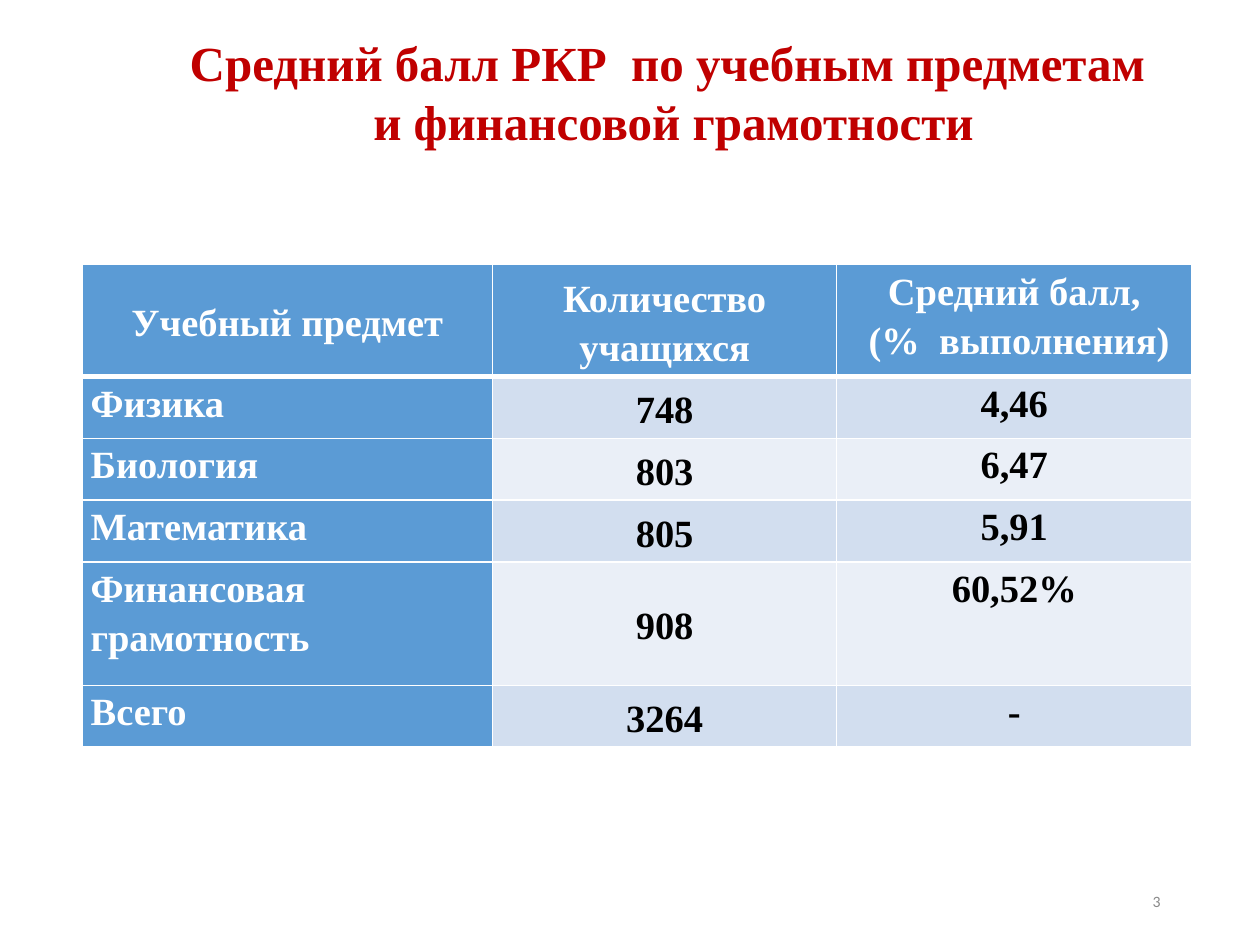
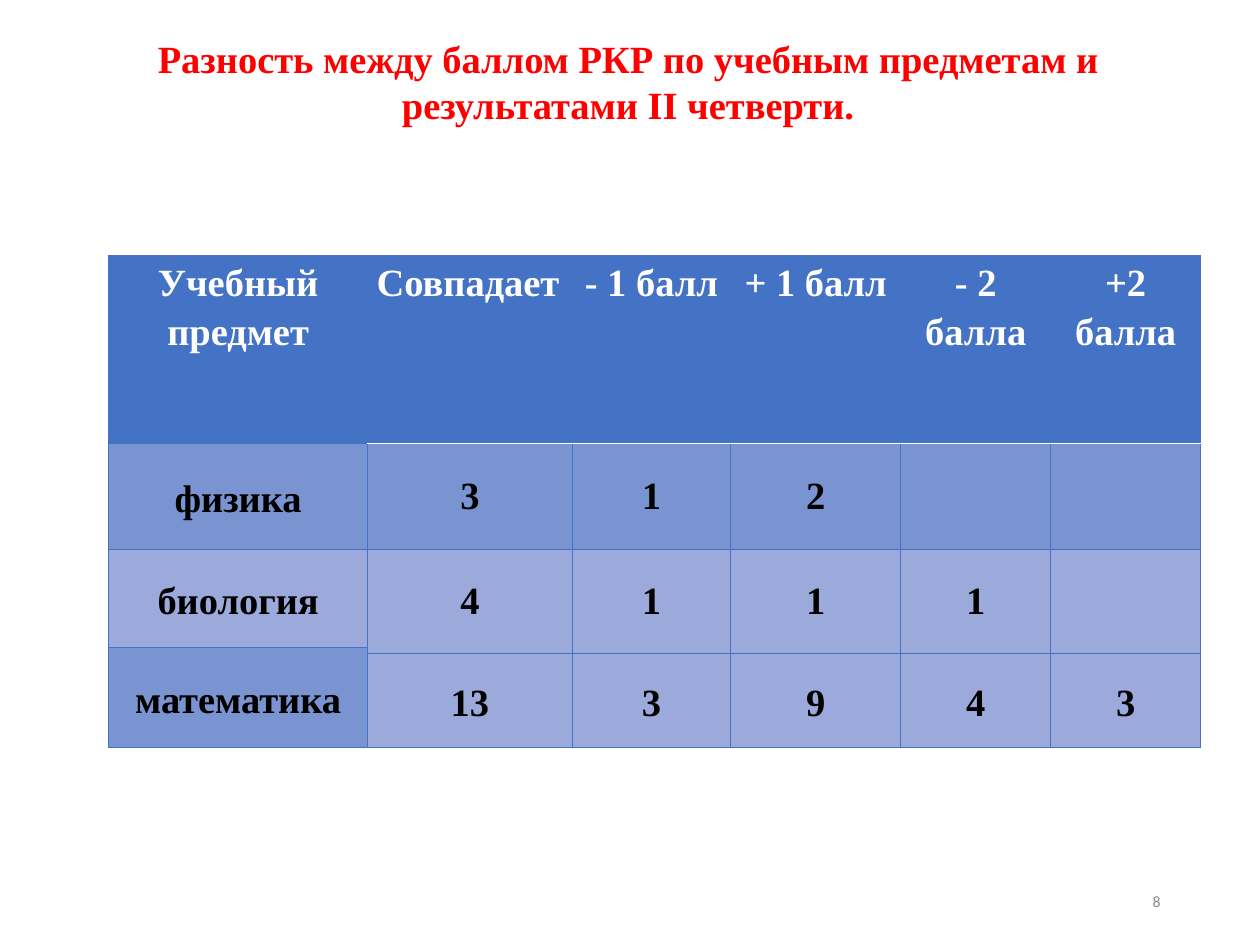
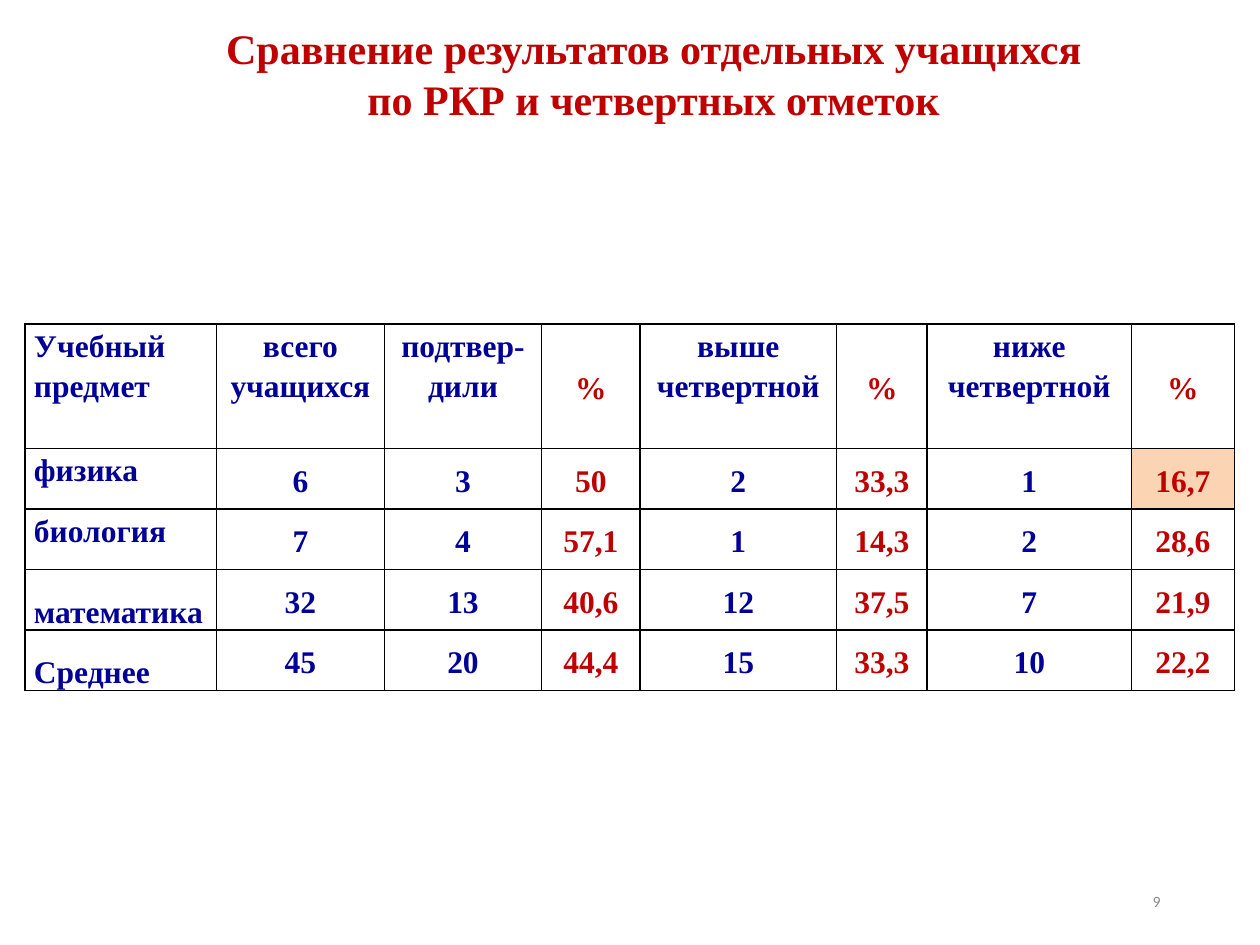
from dataclasses import dataclass

from lxml import etree
from pptx import Presentation
from pptx import util as u
from pptx.dml.color import RGBColor
from pptx.enum import text
from pptx.oxml import ns

LEFT, CENTER = text.PP_ALIGN.LEFT, text.PP_ALIGN.CENTER
RIGHT, JUSTIFY = text.PP_ALIGN.RIGHT, text.PP_ALIGN.JUSTIFY
TOP, MIDDLE = text.MSO_ANCHOR.TOP, text.MSO_ANCHOR.MIDDLE
BOTTOM = text.MSO_ANCHOR.BOTTOM


@dataclass(frozen=True)
class Theme:
    font: str = "Times New Roman"
    number_font: str = "Calibri"
    white: str = "FFFFFF"
    black: str = "000000"
    dark_red: str = "C00000"
    red: str = "FF0000"
    navy: str = "000099"
    grey: str = "898989"
    sky: str = "5B9BD5"
    sky_band: str = "D2DEEF"
    sky_pale: str = "EAEFF7"
    blue: str = "4472C4"
    blue_band: str = "7994D1"
    blue_pale: str = "9BAADA"
    peach: str = "FBD4B4"
    title_large: int = 28
    title_medium: int = 24
    title_small: int = 22
    table_large: int = 22
    table_small: int = 18
    number_size: int = 9
    line_spacing: float = 1.15
    cell_inset: float = 0.07


T = Theme()


@dataclass
class CellStyle:
    color: str
    fill: str = ""
    size: int = T.table_large
    align: int = CENTER
    anchor: int = MIDDLE
    spacing: float = T.line_spacing


@dataclass
class Rules:
    color: str
    width: float
    header_color: str = ""
    header_width: float = 0
    header_from: int = 0

    def at(self, row, col, side):
        under_header = (row, side) in ((0, "B"), (1, "T"))
        if self.header_color and under_header and col >= self.header_from:
            return self.header_color, self.header_width
        return self.color, self.width


def write_text(tf, content, size, color, align, font=T.font, bold=True, spacing=None):
    for i, line in enumerate(content.split("\n")):
        p = tf.paragraphs[0] if i == 0 else tf.add_paragraph()
        p.alignment = align
        p.line_spacing = spacing
        r = p.add_run()
        r.text = line
        r.font.name = font
        r.font.size = u.Pt(size)
        r.font.bold = bold
        r.font.color.rgb = RGBColor.from_string(color)


def add_title(s, content, box, size, color, wrap=True):
    sp = s.shapes.title
    sp.left, sp.top, sp.width, sp.height = map(u.Inches, box)
    tf = sp.text_frame
    tf.word_wrap = wrap
    tf.auto_size = text.MSO_AUTO_SIZE.NONE
    tf.vertical_anchor = TOP
    write_text(tf, content, size, color, CENTER)


def add_number(s, number):
    sp = s.shapes.add_textbox(*map(u.Inches, (7.06, 6.95, 2.25, 0.4)))
    tf = sp.text_frame
    tf.word_wrap = True
    tf.vertical_anchor = MIDDLE
    write_text(tf, number, T.number_size, T.grey, RIGHT, T.number_font, False)


def set_borders(cell, row, col, rules):
    tc_pr = cell._tc.get_or_add_tcPr()
    for side in "LRTB":
        color, width = rules.at(row, col, side)
        ln = etree.SubElement(tc_pr, ns.qn(f"a:ln{side}"), w=str(u.Pt(width)))
        fill = etree.SubElement(ln, ns.qn("a:solidFill"))
        etree.SubElement(fill, ns.qn("a:srgbClr"), val=color)


def format_cell(cell, content, style):
    cell.margin_left = cell.margin_right = u.Inches(T.cell_inset)
    cell.margin_top = cell.margin_bottom = 0
    cell.vertical_anchor = style.anchor
    if style.fill:
        cell.fill.solid()
        cell.fill.fore_color.rgb = RGBColor.from_string(style.fill)
    else:
        cell.fill.background()
    if content:
        write_text(cell.text_frame, content, style.size, style.color,
                   style.align, spacing=style.spacing)


def add_table(s, left, top, widths, heights, data, style_at, rules, merges=()):
    frame = s.shapes.add_table(len(heights), len(widths), u.Inches(left), u.Inches(top),
                               u.Inches(sum(widths)), u.Inches(sum(heights)))
    table = frame.table
    table.first_row = table.horz_banding = False
    for column, width in zip(table.columns, widths):
        column.width = u.Inches(width)
    for row, height in zip(table.rows, heights):
        row.height = u.Inches(height)
    for first, last in merges:
        table.cell(*first).merge(table.cell(*last))
    for row, values in enumerate(data):
        for col, content in enumerate(values):
            cell = table.cell(row, col)
            set_borders(cell, row, col, rules)
            format_cell(cell, content, style_at(row, col))


def score_style(row, col):
    if row == 0:
        return CellStyle(T.white, T.sky, anchor=TOP if col == 2 else MIDDLE)
    if col == 0:
        return CellStyle(T.white, T.sky, align=LEFT, anchor=TOP)
    band = T.sky_band if row % 2 else T.sky_pale
    return CellStyle(T.black, band, anchor=MIDDLE if col == 1 else TOP)


def difference_style(row, col):
    if row == 0:
        return CellStyle(T.white, T.blue, align=LEFT if col == 1 else CENTER, anchor=TOP)
    banded = row == 1 or (col == 0 and row >= 3)
    spacing = 1.0 if col and row < 3 else T.line_spacing
    return CellStyle(T.black, T.blue_band if banded else T.blue_pale, spacing=spacing)


def comparison_style(row, col):
    percent = col in (3, 5, 7)
    style = CellStyle(T.dark_red if percent else T.navy, size=T.table_small)
    if col == 0:
        style.align, style.anchor = (JUSTIFY, TOP) if row < 3 else (LEFT, BOTTOM)
    elif row == 0 and not percent:
        style.anchor = TOP
    if (row, col) == (1, 7):
        style.fill = T.peach
    return style


def build_scores(s):
    add_title(s, "Средний балл РКР  по учебным предметам \nи финансовой грамотности",
              (1.36, 0.21, 7.97, 1.04), T.title_large, T.dark_red, wrap=False)
    data = [
        ("Учебный предмет", "Количество учащихся", "Средний балл,\n (%  выполнения)"),
        ("Физика", "748", "4,46"),
        ("Биология", "803", "6,47"),
        ("Математика", "805", "5,91"),
        ("Финансовая грамотность", "908", "60,52%"),
        ("Всего", "3264", "-"),
    ]
    add_table(s, 0.65, 2.1, (3.26, 2.73, 2.82), (0.89, 0.49, 0.49, 0.49, 0.98, 0.49),
              data, score_style, Rules(T.white, 1, T.white, 3))


def build_differences(s):
    add_title(s, "Разность между баллом РКР по учебным предметам и результатами II четверти.",
              (0.28, 0.23, 9.41, 1.18), T.title_small, T.red)
    data = [
        ("Учебный предмет", "Совпадает", "- 1 балл", "+ 1 балл", "- 2 балла", "+2 балла"),
        ("физика", "3", "1", "2", "", ""),
        ("биология", "4", "1", "1", "1", ""),
        ("математика", "", "", "", "", ""),
        ("", "13", "3", "9", "4", "3"),
    ]
    merges = [((3, 0), (4, 0))] + [((2, col), (3, col)) for col in range(1, 6)]
    add_table(s, 0.86, 2.03, (2.06, 1.62, 1.26, 1.35, 1.19, 1.19),
              (1.49, 0.84, 0.78, 0.05, 0.74), data, difference_style,
              Rules(T.blue, 0.5, T.white, 1, header_from=1), merges)


def build_comparison(s):
    add_title(s, "Сравнение результатов отдельных учащихся \nпо РКР и четвертных отметок ",
              (0.98, 0.13, 8.5, 0.91), T.title_medium, T.dark_red)
    data = [
        ("Учебный предмет", "всего учащихся", "подтвер-дили", "%",
         "выше четвертной", "%", "ниже четвертной", "%"),
        ("физика", "6", "3", "50", "2", "33,3", "1", "16,7"),
        ("биология", "7", "4", "57,1", "1", "14,3", "2", "28,6"),
        ("математика", "32", "13", "40,6", "12", "37,5", "7", "21,9"),
        ("Среднее", "45", "20", "44,4", "15", "33,3", "10", "22,2"),
    ]
    add_table(s, 0.2, 2.57, (1.52, 1.33, 1.25, 0.78, 1.56, 0.72, 1.62, 0.82),
              (0.99, 0.48, 0.48, 0.48, 0.48), data, comparison_style, Rules(T.black, 1))


def main():
    prs = Presentation()
    prs.slide_width, prs.slide_height = u.Inches(10), u.Inches(7.5)
    pages = (("3", build_scores), ("8", build_differences), ("9", build_comparison))
    for number, build in pages:
        s = prs.slides.add_slide(prs.slide_layouts[5])
        build(s)
        add_number(s, number)
    prs.save("out.pptx")


if __name__ == "__main__":
    main()
